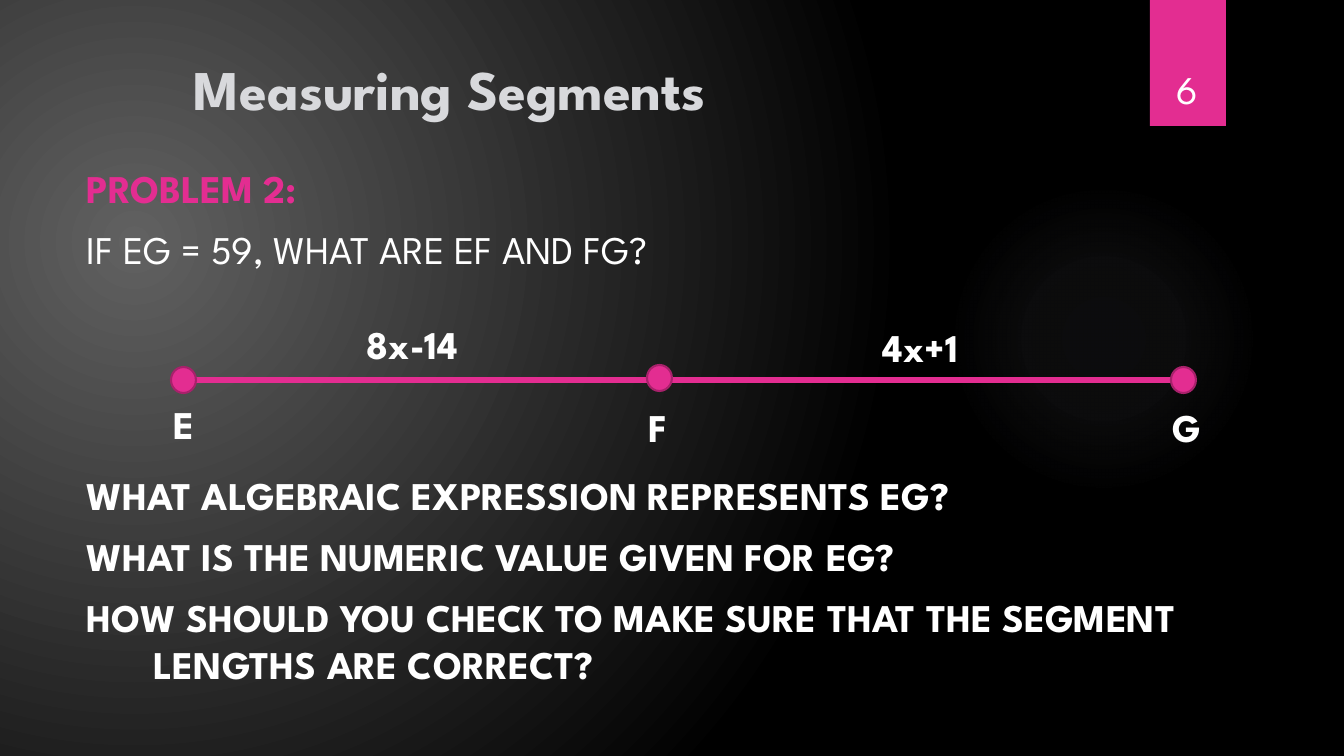
from pptx import Presentation
from pptx.dml.color import RGBColor
from pptx.enum.shapes import MSO_CONNECTOR, MSO_SHAPE
from pptx.enum.text import MSO_ANCHOR, PP_ALIGN
from pptx.oxml import parse_xml
from pptx.oxml.ns import nsdecls
from pptx.util import Pt

PX = 914400 / 100.8
OVAL, RECT = MSO_SHAPE.OVAL, MSO_SHAPE.RECTANGLE
TOP, MIDDLE, BOTTOM = MSO_ANCHOR.TOP, MSO_ANCHOR.MIDDLE, MSO_ANCHOR.BOTTOM
LEFT, CENTER = PP_ALIGN.LEFT, PP_ALIGN.CENTER

THEME = {
    "font": "League Spartan",
    "pink": RGBColor.from_string("E32D91"),
    "rim": RGBColor.from_string("A8216B"),
    "white": RGBColor.from_string("FFFFFF"),
    "silver": RGBColor.from_string("D8D9DC"),
    "title": Pt(40),
    "body": Pt(28),
    "background": [(0, "616161", 100), (100, "000000", 100)],
    "glow": [(0, "B1B1BD", 7), (36, "B1B1BD", 6), (69, "B1B1BD", 0)],
}


def px(*lengths):
    return [round(n * PX) for n in lengths]


def radial(fill, element, stops, focus):
    """Give fill a circular gradient; focus is left, top, right, bottom in percent."""
    fill.gradient()
    grad = element.xpath(".//a:gradFill")[0]
    gs = "".join(
        f'<a:gs pos="{pos * 1000}"><a:srgbClr val="{color}">'
        f'<a:alpha val="{alpha * 1000}"/></a:srgbClr></a:gs>'
        for pos, color, alpha in stops)
    l, t, r, b = [n * 1000 for n in focus]
    grad.getparent().replace(grad, parse_xml(
        f'<a:gradFill {nsdecls("a")} rotWithShape="1"><a:gsLst>{gs}</a:gsLst>'
        f'<a:path path="circle"><a:fillToRect l="{l}" t="{t}" r="{r}" b="{b}"/>'
        f'</a:path></a:gradFill>'))


prs = Presentation()
prs.slide_width, prs.slide_height = px(1344, 756)
s = prs.slides.add_slide(prs.slide_layouts[6])
radial(s.background.fill, s.element, THEME["background"], (45, 65, 125, 100))

# Backdrop glow and page badge
glow = s.shapes.add_shape(OVAL, *px(949, 184, 310, 310))
glow.shadow.inherit = False
glow.line.fill.background()
radial(glow.fill, glow.element, THEME["glow"], (50, 50, 50, 50))

badge = s.shapes.add_shape(RECT, *px(1150, 0, 76, 126))
badge.shadow.inherit = False
badge.fill.solid()
badge.fill.fore_color.rgb = THEME["pink"]
badge.line.fill.background()
badge.element.spPr.xpath("a:effectLst")[0].append(parse_xml(
    f'<a:outerShdw {nsdecls("a")} blurRad="{Pt(3)}" dist="{Pt(2)}" dir="5400000">'
    '<a:srgbClr val="000000"><a:alpha val="45000"/></a:srgbClr></a:outerShdw>'))

# Segment EG with its three points
segment = s.shapes.add_connector(MSO_CONNECTOR.STRAIGHT, *px(184, 380, 1171, 380))
segment.line.color.rgb = THEME["pink"]
segment.line.width = Pt(4)
segment.element.spPr.append(parse_xml(f'<a:effectLst {nsdecls("a")}/>'))

for x, y in [(171, 367), (647, 365), (1171, 367)]:
    dot = s.shapes.add_shape(OVAL, *px(x, y, 25, 26))
    dot.shadow.inherit = False
    dot.fill.solid()
    dot.fill.fore_color.rgb = THEME["pink"]
    dot.line.color.rgb = THEME["rim"]
    dot.line.width = Pt(1.5)

# Single-line texts: place, text, size, colour, bold, anchor, alignment
texts = [
    ((184, 17, 975, 143), "Measuring Segments", "title", "silver", True, MIDDLE, LEFT),
    ((1141, 32, 93, 85), "6", "body", "white", False, BOTTOM, CENTER),
]
for text, x, y, w in [("E", 164, 395, 41), ("F", 639, 398, 39), ("G", 1163, 398, 53),
                      ("8x-14", 357, 315, 131), ("4x+1", 873, 318, 131)]:
    texts.append(((x, y, w, 57), text, "body", "white", True, TOP, LEFT))

for at, text, size, color, bold, anchor, align in texts:
    tf = s.shapes.add_textbox(*px(*at)).text_frame
    tf.word_wrap = len(text) > 1
    tf.vertical_anchor = anchor
    p = tf.paragraphs[0]
    p.alignment = align
    r = p.add_run()
    r.text = text
    r.font.name = THEME["font"]
    r.font.size = THEME[size]
    r.font.bold = bold
    r.font.color.rgb = THEME[color]

# Problem statement above the segment, questions below it
problem = [
    ("PROBLEM 2:", "pink", True, 0),
    ("IF EG = 59, WHAT ARE EF AND FG?", "white", False, 10),
    ("WHAT ALGEBRAIC EXPRESSION REPRESENTS EG?", "white", True, 142),
    ("WHAT IS THE NUMERIC VALUE GIVEN FOR EG?", "white", True, 10),
    ("HOW SHOULD YOU CHECK TO MAKE SURE THAT THE SEGMENT LENGTHS ARE CORRECT?",
     "white", True, 10),
]
hang = px(67)[0]
tf = s.shapes.add_textbox(*px(77, 159, 1195, 572)).text_frame
tf.word_wrap = True
for i, (text, color, bold, before) in enumerate(problem):
    p = tf.add_paragraph() if i else tf.paragraphs[0]
    p.space_before = Pt(before)
    pPr = p._p.get_or_add_pPr()
    pPr.set("marL", str(hang))
    pPr.set("indent", str(-hang))
    r = p.add_run()
    r.text = text
    r.font.name = THEME["font"]
    r.font.size = THEME["body"]
    r.font.bold = bold
    r.font.color.rgb = THEME[color]

prs.save("out.pptx")
